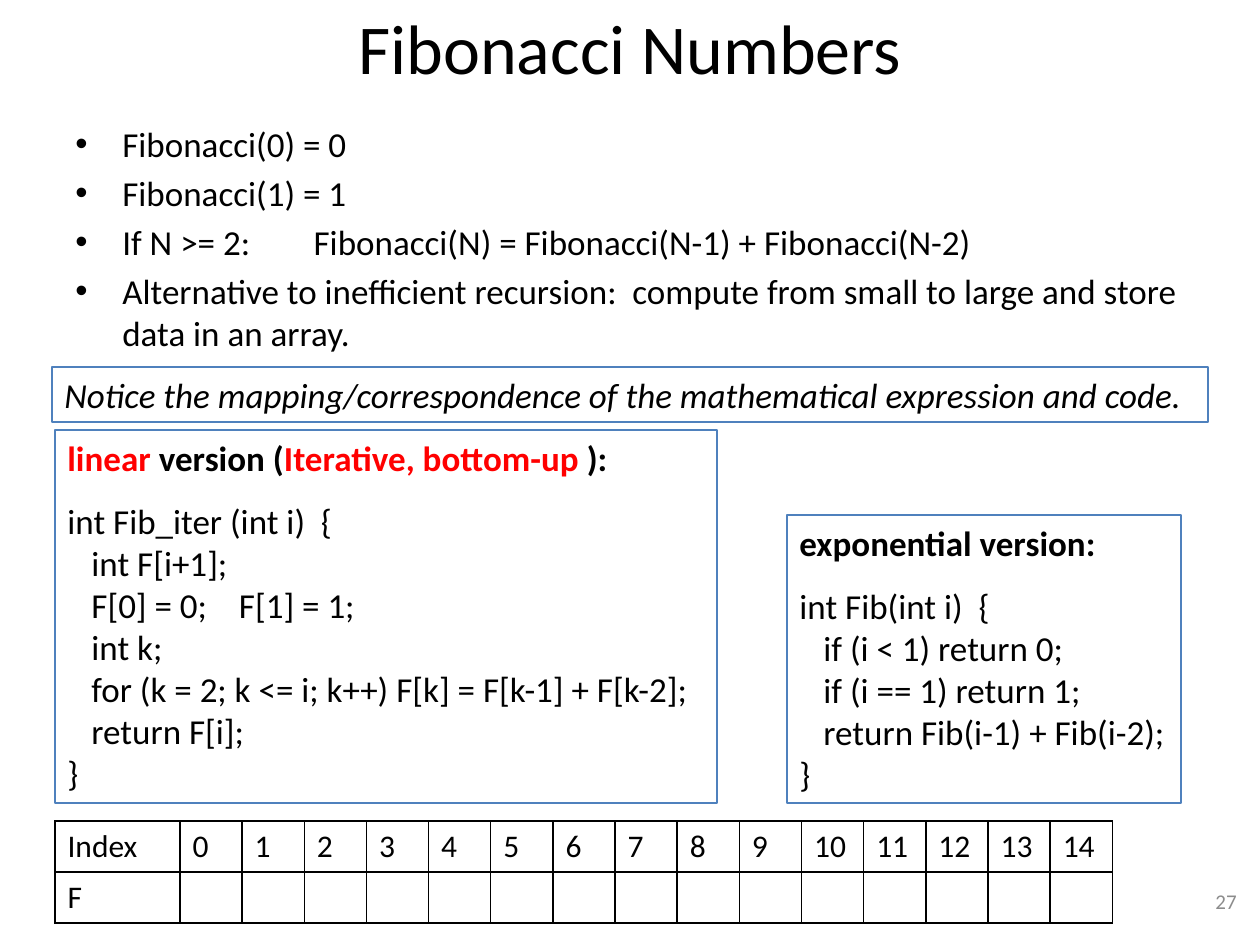
from dataclasses import dataclass
from lxml.etree import SubElement
from pptx import Presentation
from pptx.dml.color import RGBColor
from pptx.enum.shapes import MSO_SHAPE
from pptx.enum.text import MSO_ANCHOR, MSO_AUTO_SIZE, PP_ALIGN
from pptx.oxml.ns import qn
from pptx.util import Emu, Pt


@dataclass(frozen=True)
class Theme:
    font: str = "Calibri"
    text: str = "000000"
    accent: str = "FF0000"
    muted: str = "8C8C8C"
    frame: str = "4F81BD"
    title: int = 40
    body: int = 20
    cell: int = 18
    number: int = 12
    bullet_gap: int = 4
    code_gap: int = 12
    space: float = 4.52


THEME = Theme()
CODE_INDENT = 24
BULLET_INDENT = 47

FORMULAS = [
    ["Fibonacci(0) = 0"],
    ["Fibonacci(1) = 1"],
    ["If N >= 2:", "Fibonacci(N) = Fibonacci(N-1) + Fibonacci(N-2)"],
    ["Alternative to inefficient recursion:  compute from small to large and store data in an array."],
]
LINEAR_HEAD = [
    ("linear", THEME.accent),
    (" version (", THEME.text),
    ("Iterative, bottom-up ", THEME.accent),
    ("):", THEME.text),
]
LINEAR_BODY = [
    ["int F[i+1];"],
    ["F[0] = 0;", "F[1] = 1;"],
    ["int k;"],
    ["for (k = 2; k <= i; k++) F[k] = F[k-1] + F[k-2];"],
    ["return F[i];"],
]
EXPONENTIAL_HEAD = [("exponential version:", THEME.text)]
EXPONENTIAL_BODY = [
    ["if (i < 1) return 0;"],
    ["if (i == 1) return 1;"],
    ["return Fib(i-1) + Fib(i-2);"],
]


def px(n):
    return Emu(round(n * 914400 / 126))


def style_font(font, size=THEME.body, color=THEME.text, bold=False, italic=False):
    font.name = THEME.font
    font.size = Pt(size)
    font.color.rgb = RGBColor.from_string(color)
    font.bold = bold
    font.italic = italic


def add_run(p, text, **fmt):
    r = p.add_run()
    r.text = text
    style_font(r.font, **fmt)
    return r


def add_spaced(p, parts, spaces):
    add_run(p, parts[0])
    for part in parts[1:]:
        gap = add_run(p, " ")
        gap.font._element.set("spc", str(round((spaces - 1) * THEME.space * 100)))
        add_run(p, part)


def add_paragraph(tf, align=PP_ALIGN.LEFT, before=0, indent=0, hanging=0):
    first = tf.paragraphs[0]
    p = tf.add_paragraph() if first.runs else first
    p.alignment = align
    p.space_before = Pt(before)
    pPr = p._p.get_or_add_pPr()
    pPr.set("marL", str(px(indent)))
    pPr.set("indent", str(-px(hanging)))
    return p


def add_bullet(p):
    pPr = p._p.get_or_add_pPr()
    SubElement(pPr, qn("a:buFont")).set("typeface", "Arial")
    SubElement(pPr, qn("a:buChar")).set("char", "•")


def add_text(s, box, anchor=MSO_ANCHOR.TOP):
    tf = s.shapes.add_textbox(*map(px, box)).text_frame
    tf.word_wrap = True
    tf.vertical_anchor = anchor
    return tf


def add_label(s, box, text, align, **fmt):
    tf = add_text(s, box, MSO_ANCHOR.MIDDLE)
    add_run(add_paragraph(tf, align), text, **fmt)


def add_bullets(s, box, items):
    tf = add_text(s, box)
    for parts in items:
        p = add_paragraph(tf, before=THEME.bullet_gap, indent=BULLET_INDENT, hanging=BULLET_INDENT)
        add_bullet(p)
        add_spaced(p, parts, 8)


def add_frame(s, box, wrap=True):
    sp = s.shapes.add_shape(MSO_SHAPE.RECTANGLE, *map(px, box))
    sp.shadow.inherit = False
    sp.fill.background()
    sp.line.color.rgb = RGBColor.from_string(THEME.frame)
    sp.line.width = Pt(0.75)
    tf = sp.text_frame
    tf.word_wrap = wrap
    tf.auto_size = MSO_AUTO_SIZE.SHAPE_TO_FIT_TEXT
    tf.vertical_anchor = MSO_ANCHOR.TOP
    return tf


def add_code(s, box, heading, signature, body, wrap=True):
    tf = add_frame(s, box, wrap)
    p = add_paragraph(tf)
    for text, color in heading:
        add_run(p, text, color=color, bold=True)
    add_run(add_paragraph(tf, before=THEME.code_gap), signature)
    for parts in body:
        add_spaced(add_paragraph(tf, indent=CODE_INDENT), parts, 4)
    add_run(add_paragraph(tf), "}")


def style_cell(cell, text):
    p = cell.text_frame.paragraphs[0]
    if text:
        add_run(p, text, size=THEME.cell)
    else:
        end = SubElement(p._p, qn("a:endParaRPr"))
        end.set("sz", str(THEME.cell * 100))
        SubElement(end, qn("a:latin")).set("typeface", THEME.font)
    tcPr = cell._tc.get_or_add_tcPr()
    for side in ("lnL", "lnR", "lnT", "lnB"):
        ln = SubElement(tcPr, qn(f"a:{side}"))
        ln.set("w", str(Pt(1)))
        fill = SubElement(ln, qn("a:solidFill"))
        SubElement(fill, qn("a:srgbClr")).set("val", THEME.text)
    cell.fill.background()


def add_grid(s, box, rows, first_width):
    count = len(rows[0])
    table = s.shapes.add_table(len(rows), count, *map(px, box)).table
    table.first_row = False
    table.horz_banding = False
    for i, column in enumerate(table.columns):
        column.width = px((box[2] - first_width) / (count - 1) if i else first_width)
    for row, values in zip(table.rows, rows):
        row.height = px(box[3] / len(rows))
        for cell, text in zip(row.cells, values):
            style_cell(cell, text)


def main():
    prs = Presentation()
    prs.slide_width, prs.slide_height = px(1260), px(945)
    s = prs.slides.add_slide(prs.slide_layouts[6])
    add_label(s, (63, 10, 1134, 73), "Fibonacci Numbers", PP_ALIGN.CENTER, size=THEME.title)
    add_bullets(s, (63, 116, 1134, 262), FORMULAS)
    add_label(s, (955, 876, 294, 50), "27", PP_ALIGN.RIGHT, size=THEME.number, color=THEME.muted)
    add_code(s, (787, 515, 394, 288), EXPONENTIAL_HEAD, "int Fib(int i)  {", EXPONENTIAL_BODY, wrap=False)
    add_code(s, (55, 430, 662, 373), LINEAR_HEAD, "int Fib_iter (int i)  {", LINEAR_BODY)
    notice = add_paragraph(add_frame(s, (52, 367, 1156, 55)))
    add_run(notice, "Notice the mapping/correspondence of the mathematical expression and code.", italic=True)
    rows = [["Index", *map(str, range(15))], ["F"] + [""] * 15]
    add_grid(s, (55, 821, 1058, 102), rows, 125)
    prs.save("out.pptx")


if __name__ == "__main__":
    main()
